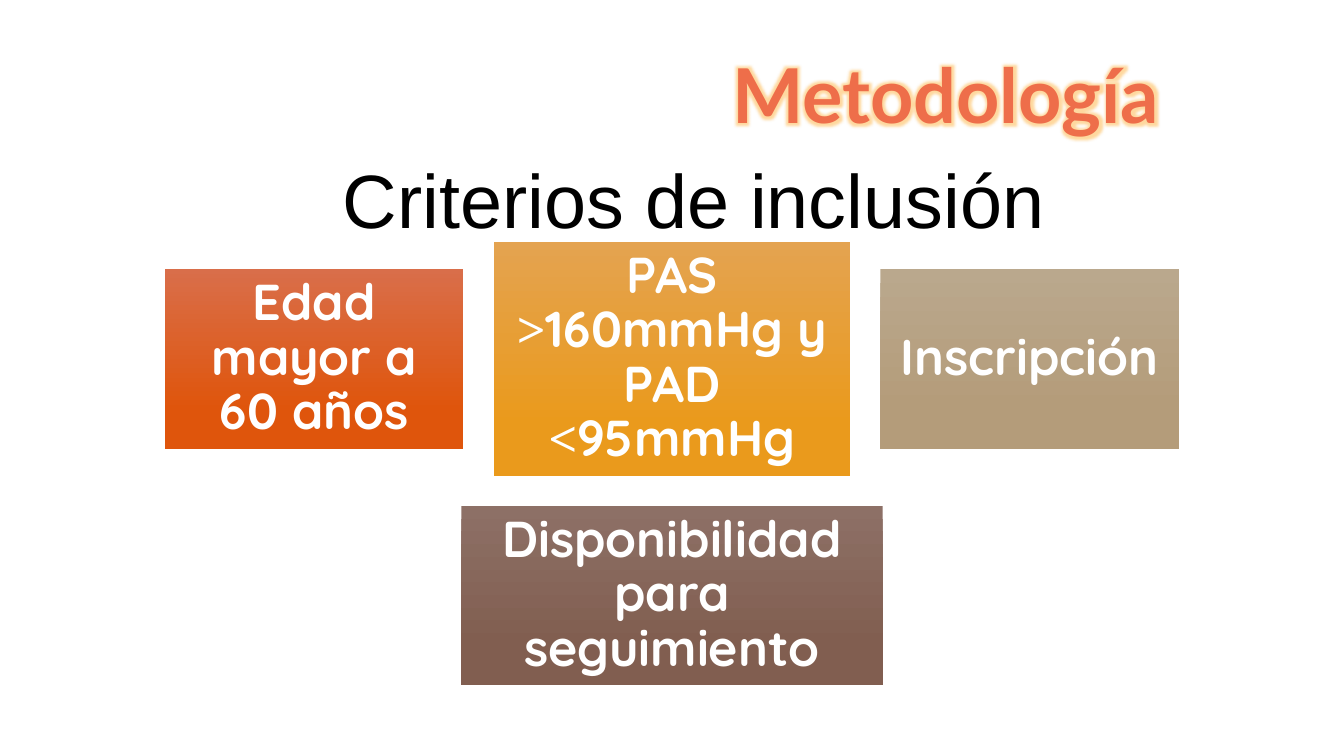
from lxml import etree
from pptx import Presentation
from pptx.dml.color import RGBColor
from pptx.enum.shapes import MSO_SHAPE as SHAPE
from pptx.enum.text import MSO_ANCHOR as ANCHOR, PP_ALIGN as ALIGN
from pptx.oxml.ns import qn
from pptx.util import Cm, Pt

WIDTH, HEIGHT = 33.87, 19.05
GAP, FIRST_TOP, PADDING = 0.76, 6.1, 0.38

COLORS = {
    "white": "FFFFFF", "black": "000000", "title": "EE6E4A", "glow": "FFC060",
    "red": ("D96E4A", "DF550C"), "orange": ("E4A350", "EA9A1C"),
    "sand": ("BAA88D", "B49C7A"), "brown": ("8D7066", "815E50"),
}

# Each row: (width, height, gradient, runs of text and font)
ROWS = [
    [
        (7.52, 4.52, "red", [("Edad mayor a 60 años", "Quicksand")]),
        (8.99, 5.89, "orange", [
            ("PAS ", "Quicksand"), (">", "Times New Roman"),
            ("160mmHg y PAD ", "Quicksand"), ("<", "Times New Roman"),
            ("95mmHg", "Quicksand")]),
        (7.52, 4.52, "sand", [("Inscripción", "Quicksand")]),
    ],
    [(10.62, 4.52, "brown", [("Disponibilidad para seguimiento", "Quicksand")])],
]


class Deck:
    def __init__(self):
        self.prs = Presentation()
        self.prs.slide_width, self.prs.slide_height = Cm(WIDTH), Cm(HEIGHT)
        self.s = self.prs.slides.add_slide(self.prs.slide_layouts[6])

    def rgb(self, hex_color):
        return RGBColor.from_string(hex_color)

    def add_text(self, tf, runs, color, size, bold, spacing=1.0):
        tf.word_wrap = True
        tf.vertical_anchor = ANCHOR.MIDDLE
        p = tf.paragraphs[0]
        p.alignment, p.line_spacing = ALIGN.CENTER, spacing
        for text, font in runs:
            r = p.add_run()
            r.text = text
            style = {"name": font, "size": Pt(size), "bold": bold}
            for key, value in style.items():
                setattr(r.font, key, value)
            r.font.color.rgb = self.rgb(COLORS[color])
        return p

    def heading(self, x, y, text, font, color, bold):
        box = self.s.shapes.add_textbox(Cm(x), Cm(y), Cm(20.75), Cm(2.21))
        return self.add_text(box.text_frame, [(text, font)], color, 54, bold)

    def glow(self, r, color, radius, alpha):
        effects = etree.Element(qn("a:effectLst"))
        glow = etree.SubElement(effects, qn("a:glow"), rad=str(Pt(radius)))
        clr = etree.SubElement(glow, qn("a:srgbClr"), val=COLORS[color])
        etree.SubElement(clr, qn("a:alpha"), val=str(alpha * 1000))
        r._r.get_or_add_rPr().find(qn("a:solidFill")).addnext(effects)

    def card(self, x, y, w, h, gradient, runs):
        sp = self.s.shapes.add_shape(SHAPE.RECTANGLE, Cm(x), Cm(y), Cm(w), Cm(h))
        sp.shadow.inherit = False
        sp.line.fill.background()
        sp.fill.gradient()
        sp.fill.gradient_angle = 270
        for stop, position, color in zip(sp.fill.gradient_stops, (0, 0.78), COLORS[gradient]):
            stop.position = position
            stop.color.rgb = self.rgb(color)
        tf = sp.text_frame
        for side in ("left", "top", "right", "bottom"):
            setattr(tf, f"margin_{side}", Cm(PADDING))
        self.add_text(tf, runs, "white", 36, True, 0.9)


def main():
    deck = Deck()

    # Criteria: rows centred on the slide, cards centred within each row
    top = FIRST_TOP
    for row in ROWS:
        row_height = max(h for _, h, _, _ in row)
        left = (WIDTH - sum(w for w, _, _, _ in row) - GAP * (len(row) - 1)) / 2
        for w, h, gradient, runs in row:
            deck.card(left, top + (row_height - h) / 2, w, h, gradient, runs)
            left += w + GAP
        top += row_height + GAP

    # Headings
    deck.heading(7.11, 3.89, "Criterios de inclusión", "Arial", "black", False)
    p = deck.heading(13.46, 1.24, "Metodología", "Lato", "title", True)
    deck.glow(p.runs[0], "glow", 8, 60)

    deck.prs.save("out.pptx")


if __name__ == "__main__":
    main()
